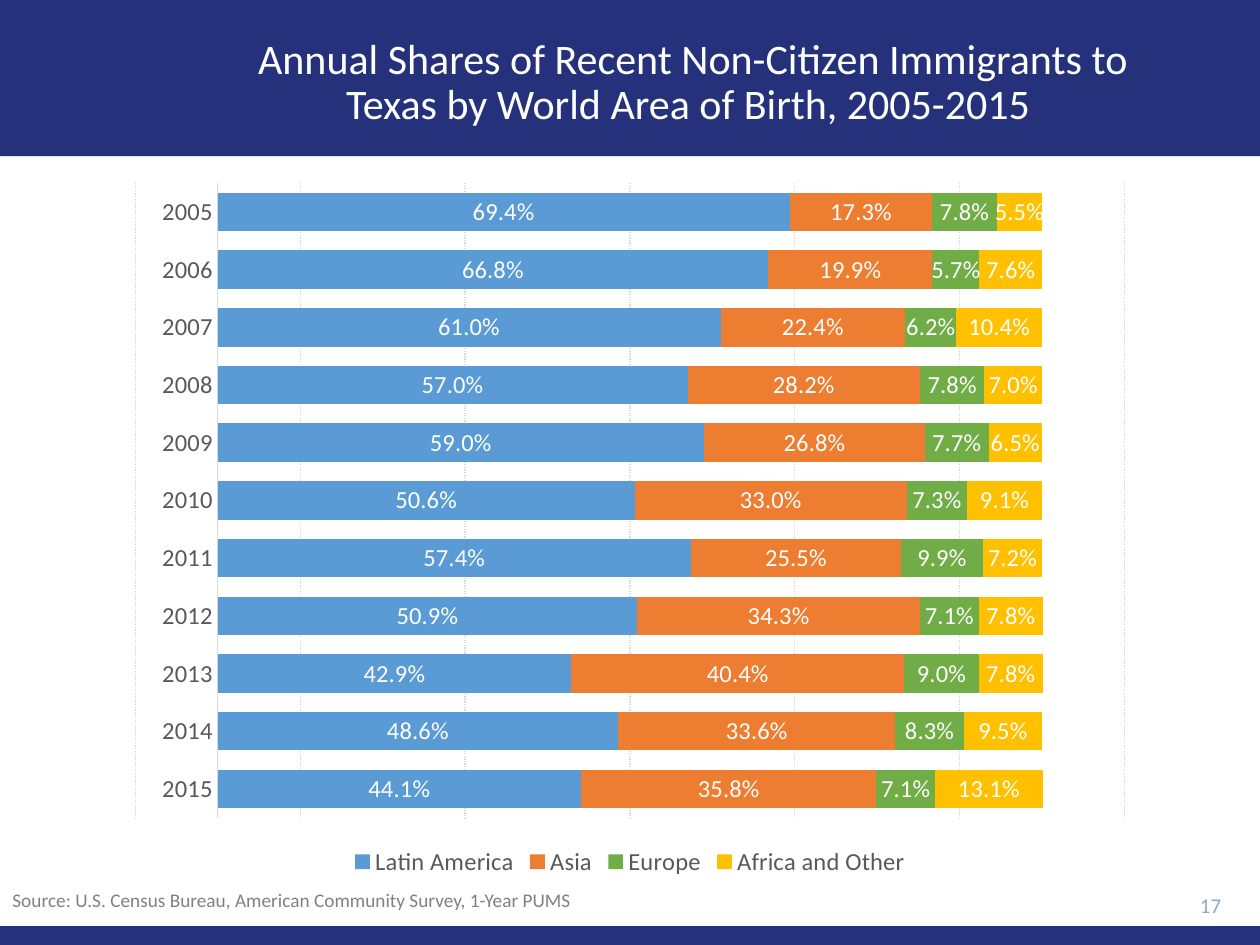
from dataclasses import dataclass

from lxml.etree import SubElement
from pptx import Presentation
from pptx.chart.data import CategoryChartData
from pptx.dml.color import RGBColor as RGB
from pptx.enum.chart import XL_CHART_TYPE as ChartType
from pptx.enum.chart import XL_LABEL_POSITION as LabelPos
from pptx.enum.chart import XL_LEGEND_POSITION as LegendPos
from pptx.enum.chart import XL_TICK_LABEL_POSITION as TickLabel
from pptx.enum.chart import XL_TICK_MARK as Tick
from pptx.enum.dml import MSO_LINE_DASH_STYLE as Dash
from pptx.enum.shapes import MSO_SHAPE as Shape
from pptx.enum.text import MSO_ANCHOR as Anchor
from pptx.enum.text import PP_ALIGN as Align
from pptx.oxml.ns import qn
from pptx.util import Inches, Pt


@dataclass(frozen=True)
class Theme:
    font: str = "Calibri"
    navy: str = "25327B"
    white: str = "FFFFFF"
    number: str = "8FA5D1"
    source: str = "808080"
    label: str = "595959"
    grid: str = "D9D9D9"
    title_size: int = 24
    chart_size: int = 14
    number_size: int = 12
    source_size: int = 11


THEME = Theme()
WIDTH, HEIGHT = Inches(10), Inches(7.5)
COLS, ROWS = 100, 75

YEARS = [str(year) for year in range(2005, 2016)]
# Region of birth: (colour, percent for each year)
SHARES = {
    "Latin America": ("5B9BD5", [69.4, 66.8, 61.0, 57.0, 59.0, 50.6, 57.4, 50.9, 42.9, 48.6, 44.1]),
    "Asia": ("ED7D31", [17.3, 19.9, 22.4, 28.2, 26.8, 33.0, 25.5, 34.3, 40.4, 33.6, 35.8]),
    "Europe": ("70AD47", [7.8, 5.7, 6.2, 7.8, 7.7, 7.3, 9.9, 7.1, 9.0, 8.3, 7.1]),
    "Africa and Other": ("FFC000", [5.5, 7.6, 10.4, 7.0, 6.5, 9.1, 7.2, 7.8, 7.8, 9.5, 13.1]),
}


def box(col, row, cols, rows):
    """Turn grid columns and rows into left, top, width and height."""
    return (round(col * WIDTH / COLS), round(row * HEIGHT / ROWS),
            round(cols * WIDTH / COLS), round(rows * HEIGHT / ROWS))


def style_font(font, size, color):
    font.name = THEME.font
    font.size = Pt(size)
    font.color.rgb = RGB.from_string(color)


def add_band(slide, area):
    sp = slide.shapes.add_shape(Shape.RECTANGLE, *area)
    sp.shadow.inherit = False
    sp.fill.solid()
    sp.fill.fore_color.rgb = RGB.from_string(THEME.navy)
    sp.line.fill.background()


def add_text(slide, area, text, size, color, align=Align.LEFT, anchor=Anchor.TOP, spacing=None):
    tf = slide.shapes.add_textbox(*area).text_frame
    tf.word_wrap = True
    tf.vertical_anchor = anchor
    p = tf.paragraphs[0]
    p.text = text
    p.alignment = align
    p.line_spacing = spacing
    style_font(p.runs[0].font, size, color)


def style_grid_line(line, dash=None):
    line.color.rgb = RGB.from_string(THEME.grid)
    line.width = Pt(0.75)
    if dash:
        line.dash_style = dash


def set_plot_area(chart, **shares):
    """Fix the inner plot area as shares (x, y, w, h) of the chart."""
    plot_area = chart._chartSpace.chart.plotArea
    for old in plot_area.findall(qn("c:layout")):
        plot_area.remove(old)
    layout = SubElement(plot_area, qn("c:layout"))
    plot_area.insert(0, layout)
    manual = SubElement(layout, qn("c:manualLayout"))
    settings = {"layoutTarget": "inner", "xMode": "edge", "yMode": "edge", **shares}
    for name, value in settings.items():
        SubElement(manual, qn(f"c:{name}")).set("val", str(value))


def style_axes(chart):
    years = chart.category_axis
    years.reverse_order = True
    years.major_tick_mark = years.minor_tick_mark = Tick.NONE
    years.tick_label_position = TickLabel.NEXT_TO_AXIS
    style_font(years.tick_labels.font, THEME.chart_size, THEME.label)
    style_grid_line(years.format.line)

    shares = chart.value_axis
    shares.visible = False
    shares.minimum_scale, shares.maximum_scale, shares.major_unit = -0.1, 1.1, 0.2
    shares.has_major_gridlines = True
    style_grid_line(shares.major_gridlines.format.line, Dash.ROUND_DOT)


def style_series(series, color):
    series.format.fill.solid()
    series.format.fill.fore_color.rgb = RGB.from_string(color)
    labels = series.data_labels
    labels.show_value = True
    labels.position = LabelPos.CENTER
    labels.number_format, labels.number_format_is_linked = "0.0%", False
    style_font(labels.font, THEME.chart_size, THEME.white)


def add_shares_chart(slide, area):
    data = CategoryChartData(number_format="0.0%")
    data.categories = YEARS
    for region, (_, percents) in SHARES.items():
        data.add_series(region, [round(value / 100, 3) for value in percents])
    chart = slide.shapes.add_chart(ChartType.BAR_STACKED, *area, data).chart
    chart.has_title = False
    chart.font.name, chart.font.size = THEME.font, Pt(THEME.chart_size)

    plot = chart.plots[0]
    plot.gap_width, plot.overlap = 50, 100
    plot.vary_by_categories = False
    for series in plot.series:
        style_series(series, SHARES[series.name][0])

    style_axes(chart)
    set_plot_area(chart, x=0.02, y=0.02, w=0.96, h=0.89)
    chart.has_legend = True
    chart.legend.position = LegendPos.BOTTOM
    chart.legend.include_in_layout = False
    style_font(chart.legend.font, THEME.chart_size, THEME.label)


def add_header(slide):
    add_band(slide, box(0, 0, COLS, 12.4))
    add_text(slide, box(17.5, 2.5, 75, 10.8),
             "Annual Shares of Recent Non-Citizen Immigrants to "
             "Texas by World Area of Birth, 2005-2015 ",
             THEME.title_size, THEME.white, Align.CENTER, spacing=0.9)


def add_footer(slide):
    add_band(slide, box(0, ROWS - 1.5, COLS, 1.5))
    add_text(slide, box(0, 70, 87.5, 2.9),
             "Source: U.S. Census Bureau, American Community Survey, 1-Year PUMS",
             THEME.source_size, THEME.source)
    add_text(slide, box(89, 70.1, 8.9, 3.4), "17",
             THEME.number_size, THEME.number, Align.RIGHT, Anchor.MIDDLE)


def main():
    prs = Presentation()
    prs.slide_width, prs.slide_height = WIDTH, HEIGHT
    slide = prs.slides.add_slide(prs.slide_layouts[6])
    add_header(slide)
    add_shares_chart(slide, box(9.1, 13.4, 81.8, 56.6))
    add_footer(slide)
    prs.save("out.pptx")


if __name__ == "__main__":
    main()
